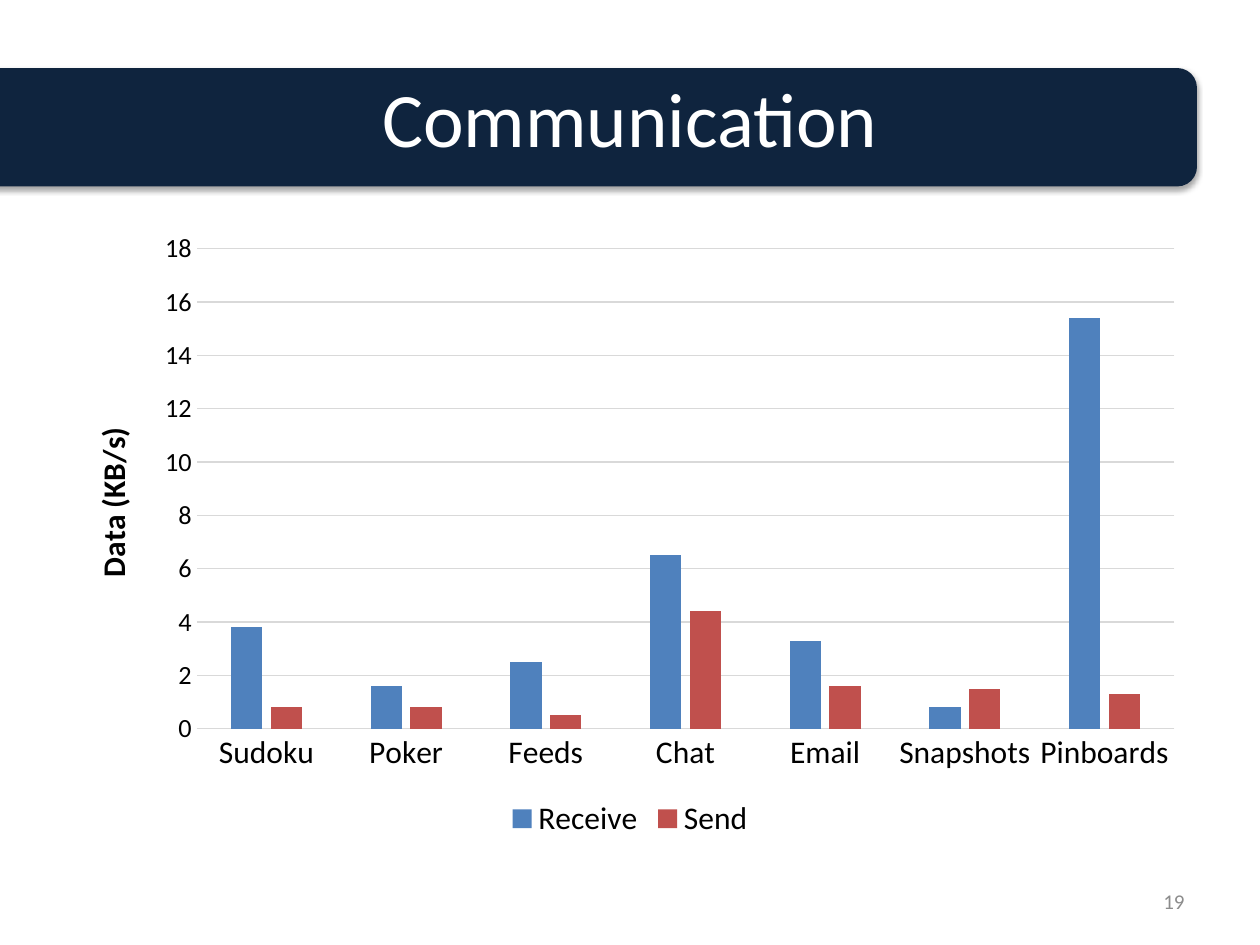
from lxml.etree import SubElement
from pptx import Presentation
from pptx.chart.data import CategoryChartData
from pptx.dml.color import RGBColor
from pptx.enum.chart import XL_CHART_TYPE, XL_LEGEND_POSITION, XL_TICK_MARK
from pptx.enum.shapes import MSO_SHAPE
from pptx.enum.text import MSO_ANCHOR, PP_ALIGN
from pptx.oxml.ns import qn
from pptx.util import Inches, Pt

COLORS = {
    "banner": "0F243E",
    "title": "FFFFFF",
    "text": "000000",
    "grid": "D9D9D9",
    "number": "8C8C8C",
    "Receive": "4F81BD",
    "Send": "C0504D",
}
FONT = "Calibri"
MARGIN = Inches(0.5)


def color(name):
    return RGBColor.from_string(COLORS[name])


def style_font(font, size, color_name, bold=False):
    font.name = FONT
    font.size = Pt(size)
    font.bold = bold
    font.color.rgb = color(color_name)


presentation = Presentation()
presentation.slide_width = Inches(10)
presentation.slide_height = Inches(7.5)
slide = presentation.slides.add_slide(presentation.slide_layouts[5])
content_width = presentation.slide_width - 2 * MARGIN
right_edge = presentation.slide_width - MARGIN

# Banner bleeding off the left edge, with a soft shadow below
banner_left = Inches(-0.71)
banner = slide.shapes.add_shape(
    MSO_SHAPE.ROUNDED_RECTANGLE,
    banner_left, Inches(0.54), right_edge - banner_left, Inches(0.94))
banner.fill.solid()
banner.fill.fore_color.rgb = color("banner")
banner.line.fill.background()
banner.shadow.inherit = False
effects = banner.element.spPr.find(qn("a:effectLst"))
shadow = SubElement(effects, qn("a:outerShdw"), blurRad=str(Pt(3.1)),
                    dist=str(Pt(1.8)), dir="5400000", rotWithShape="0")
shadow_color = SubElement(shadow, qn("a:srgbClr"), val=COLORS["text"])
SubElement(shadow_color, qn("a:alpha"), val="35000")

# Title, in front of the banner
title = slide.shapes.title
title.left, title.top = MARGIN, Inches(0.3)
title.width, title.height = content_width, Inches(1.25)
title.text_frame.text = "Communication"
title.text_frame.vertical_anchor = MSO_ANCHOR.MIDDLE
paragraph = title.text_frame.paragraphs[0]
paragraph.alignment = PP_ALIGN.CENTER
style_font(paragraph.font, 44, "title")
banner.element.addnext(title.element)

# Chart of data rates
chart_data = CategoryChartData()
chart_data.categories = ["Sudoku", "Poker", "Feeds", "Chat", "Email",
                         "Snapshots", "Pinboards"]
chart_data.add_series("Receive", [3.8, 1.6, 2.5, 6.5, 3.3, 0.8, 15.4])
chart_data.add_series("Send", [0.8, 0.8, 0.5, 4.4, 1.6, 1.5, 1.3])
chart = slide.shapes.add_chart(
    XL_CHART_TYPE.COLUMN_CLUSTERED,
    MARGIN, Inches(1.75), content_width, Inches(4.95), chart_data).chart
chart.has_title = False
style_font(chart.font, 10, "text")

plot = chart.plots[0]
plot.gap_width = 219
plot.overlap = -27
plot.vary_by_categories = False
for series in plot.series:
    series.format.fill.solid()
    series.format.fill.fore_color.rgb = color(series.name)

# Axes
category_axis, value_axis = chart.category_axis, chart.value_axis
for axis, size in ((category_axis, 18), (value_axis, 15)):
    axis.major_tick_mark = XL_TICK_MARK.NONE
    axis.minor_tick_mark = XL_TICK_MARK.NONE
    style_font(axis.tick_labels.font, size, "text")
value_axis.minimum_scale = 0
value_axis.maximum_scale = 18
value_axis.major_unit = 2
value_axis.tick_labels.number_format = "0"
value_axis.tick_labels.number_format_is_linked = False
value_axis.format.line.fill.background()
for line in (category_axis.format.line, value_axis.major_gridlines.format.line):
    line.color.rgb = color("grid")
    line.width = Pt(0.75)
axis_title = value_axis.axis_title.text_frame
axis_title.text = "Data (KB/s)"
style_font(axis_title.paragraphs[0].font, 18, "text", bold=True)

# Legend
chart.has_legend = True
chart.legend.position = XL_LEGEND_POSITION.BOTTOM
chart.legend.include_in_layout = False
style_font(chart.legend.font, 18, "text")

# Slide number
number_width = Inches(2.33)
number = slide.shapes.add_textbox(
    right_edge - number_width, Inches(6.95), number_width, Inches(0.4))
number.text_frame.word_wrap = True
number.text_frame.vertical_anchor = MSO_ANCHOR.MIDDLE
number.text_frame.text = "19"
paragraph = number.text_frame.paragraphs[0]
paragraph.alignment = PP_ALIGN.RIGHT
style_font(paragraph.font, 12, "number")

presentation.save("out.pptx")
